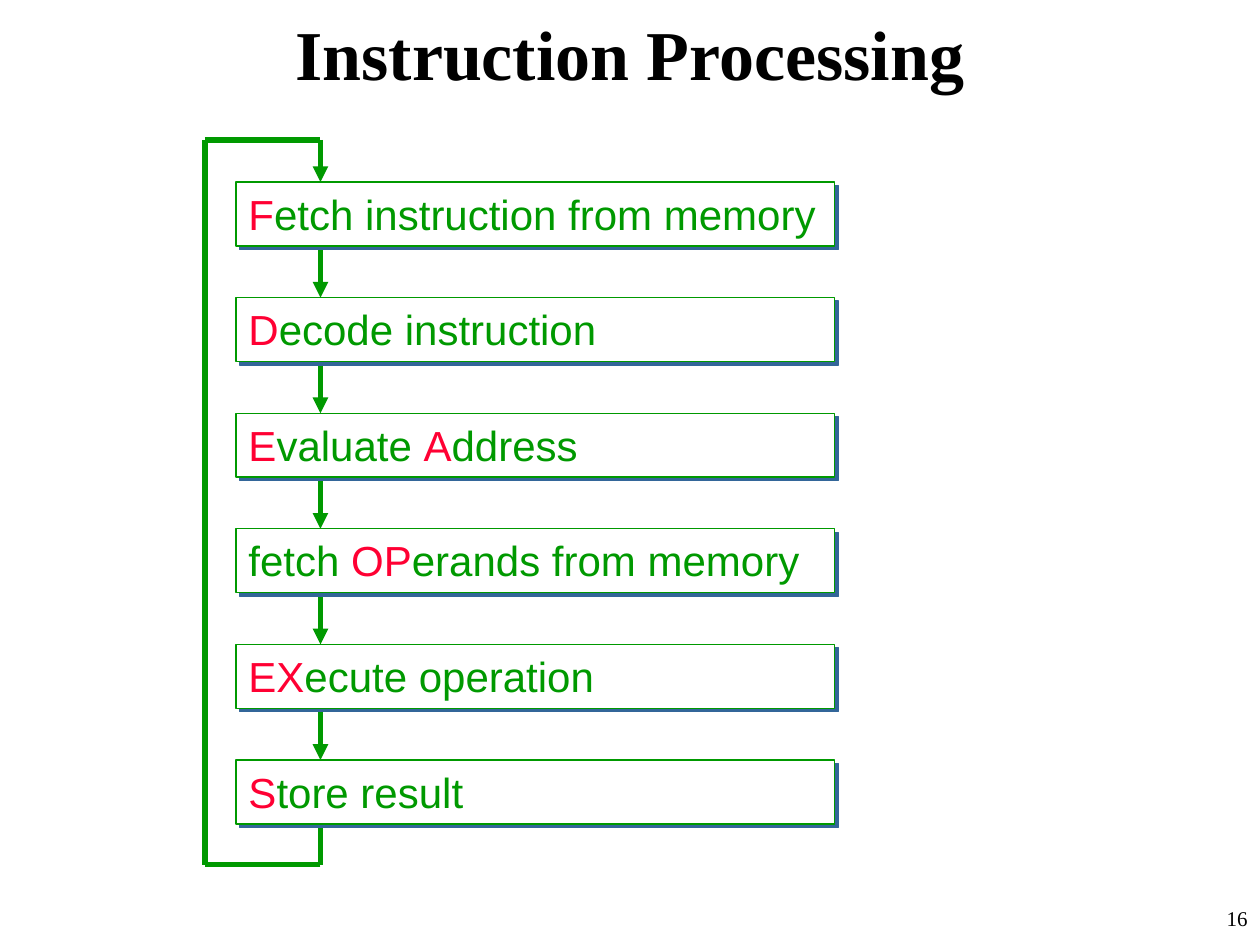
from lxml.etree import SubElement
from pptx import Presentation
from pptx.dml.color import RGBColor
from pptx.enum.shapes import MSO_CONNECTOR as Link, MSO_SHAPE as Preset
from pptx.enum.text import MSO_ANCHOR as Anchor, PP_ALIGN as Align
from pptx.oxml.ns import qn
from pptx.util import Cm, Pt

BLACK = RGBColor(0x00, 0x00, 0x00)
WHITE = RGBColor(0xFF, 0xFF, 0xFF)
GREEN = RGBColor(0x00, 0x99, 0x00)
RED = RGBColor(0xFF, 0x00, 0x33)
SHADOW_BLUE = RGBColor(0x33, 0x66, 0x99)

STEP_LEFT, STEP_TOP = 4.76, 3.67
STEP_WIDTH, STEP_HEIGHT, STEP_PITCH = 12.07, 1.29, 2.33
FLOW_X = 6.46
LOOP_LEFT, LOOP_TOP, LOOP_BOTTOM = 4.13, 2.82, 17.43

STEPS = [
    [("F", RED), ("etch instruction from memory", GREEN)],
    [("D", RED), ("ecode instruction", GREEN)],
    [("E", RED), ("valuate ", GREEN), ("A", RED), ("ddress", GREEN)],
    [("fetch ", GREEN), ("OP", RED), ("erands from memory", GREEN)],
    [("EX", RED), ("ecute operation", GREEN)],
    [("S", RED), ("tore result", GREEN)],
]


def add_run(paragraph, text, font_name, size, color, bold=False):
    run = paragraph.add_run()
    run.text = text
    run.font.name = font_name
    run.font.size = Pt(size)
    run.font.bold = bold
    run.font.color.rgb = color


def add_label(slide, text, left, top, width, height, size, align, anchor, bold=False):
    frame = slide.shapes.add_textbox(Cm(left), Cm(top), Cm(width), Cm(height)).text_frame
    frame.word_wrap = True
    frame.vertical_anchor = anchor
    paragraph = frame.paragraphs[0]
    paragraph.alignment = align
    add_run(paragraph, text, "Times New Roman", size, BLACK, bold)


def add_offset_shadow(shape):
    shape.shadow.inherit = False
    effects = shape.fill._xPr.find(qn("a:effectLst"))
    shadow = SubElement(effects, qn("a:outerShdw"), blurRad="0", dist=str(Pt(2.8)),
                        dir="2700000", algn="ctr", rotWithShape="0")
    SubElement(shadow, qn("a:srgbClr"), val=str(SHADOW_BLUE))


def add_step(slide, parts, top):
    step = slide.shapes.add_shape(Preset.RECTANGLE, Cm(STEP_LEFT), Cm(top),
                                  Cm(STEP_WIDTH), Cm(STEP_HEIGHT))
    step.fill.solid()
    step.fill.fore_color.rgb = WHITE
    step.line.color.rgb = GREEN
    step.line.width = Pt(0.75)
    add_offset_shadow(step)
    frame = step.text_frame
    frame.word_wrap = True
    frame.vertical_anchor = Anchor.TOP
    paragraph = frame.paragraphs[0]
    paragraph.alignment = Align.LEFT
    for text, color in parts:
        add_run(paragraph, text, "Arial", 24, color)


def add_flow(slide, start, end, arrow=False):
    flow = slide.shapes.add_connector(Link.STRAIGHT, *map(Cm, start + end))
    flow.line.color.rgb = GREEN
    flow.line.width = Pt(3)
    if arrow:
        SubElement(flow.line._get_or_add_ln(), qn("a:tailEnd"), type="triangle")
    SubElement(flow._element.spPr, qn("a:effectLst"))


def add_loop(slide, last_bottom):
    corners = [(FLOW_X, last_bottom), (FLOW_X, LOOP_BOTTOM), (LOOP_LEFT, LOOP_BOTTOM),
               (LOOP_LEFT, LOOP_TOP), (FLOW_X, LOOP_TOP), (FLOW_X, STEP_TOP)]
    for start, end in zip(corners, corners[1:]):
        add_flow(slide, start, end, arrow=end == corners[-1])


def main():
    deck = Presentation()
    deck.slide_width, deck.slide_height = Cm(25.4), Cm(19.05)
    slide = deck.slides.add_slide(deck.slide_layouts[6])

    add_label(slide, "16", 20.12, 18.14, 5.28, 0.91, 12, Align.RIGHT, Anchor.TOP)
    add_label(slide, "Instruction Processing", 0, 0, 25.4, 2.13, 40,
              Align.CENTER, Anchor.MIDDLE, bold=True)

    tops = [STEP_TOP + i * STEP_PITCH for i in range(len(STEPS))]
    for top, next_top in zip(tops, tops[1:]):
        add_flow(slide, (FLOW_X, top + STEP_HEIGHT), (FLOW_X, next_top), arrow=True)
    add_loop(slide, tops[-1] + STEP_HEIGHT)
    for parts, top in zip(STEPS, tops):
        add_step(slide, parts, top)

    deck.save("out.pptx")


if __name__ == "__main__":
    main()
